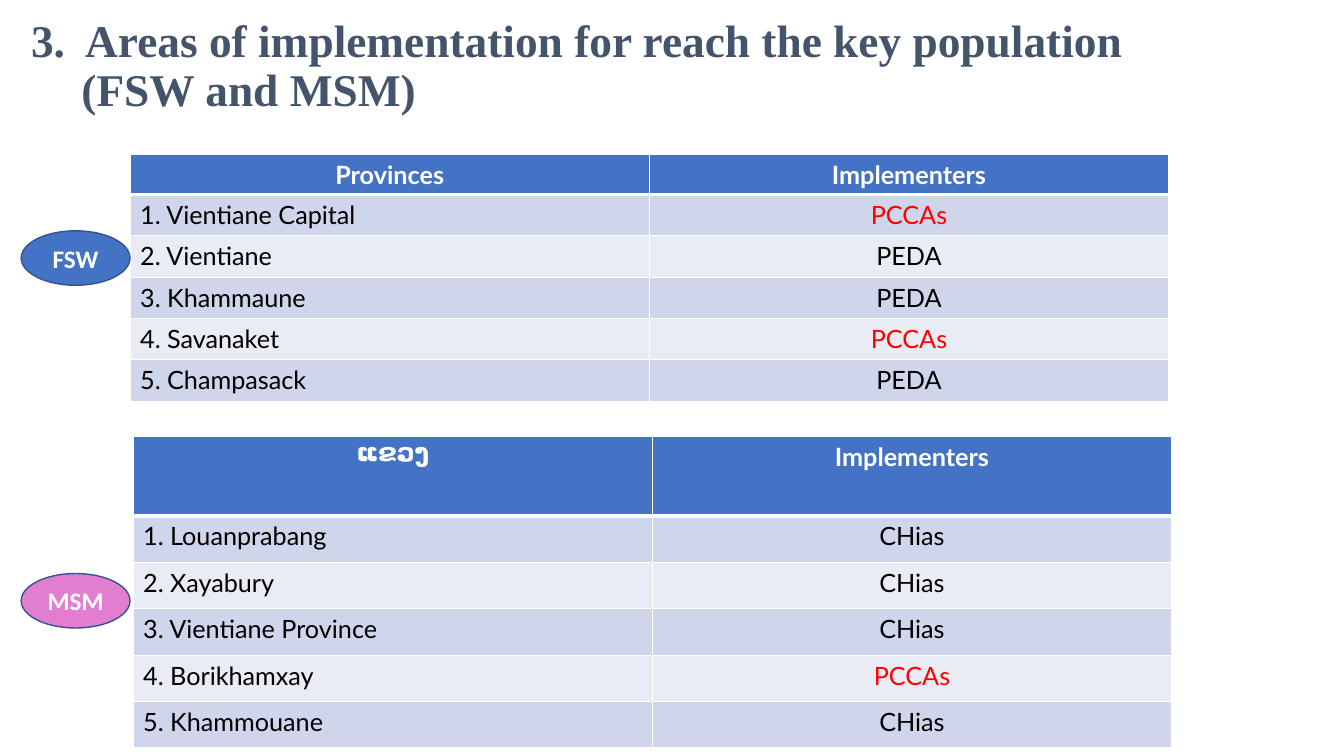
from lxml import etree
from pptx import Presentation
from pptx.dml.color import RGBColor
from pptx.enum import shapes, text
from pptx.oxml.ns import qn
from pptx.util import Inches, Pt

TITLE = "3.  Areas of implementation for reach the key population\v\t(FSW and MSM)"
BLUE, WHITE, BLACK, RED = "4472C4", "FFFFFF", "000000", "FF0000"
BANDS = ("CFD5EA", "E9EBF5")
HIGHLIGHTED = "PCCAs"
COLUMN_WIDTH = 5.15

# group, badge colour, badge top, table left and top, header and row heights, rows
GROUPS = [
    ("FSW", BLUE, 2.29, (1.29, 1.53), (0.38, 0.41), [
        ("Provinces", "Implementers"),
        ("1. Vientiane Capital", "PCCAs"),
        ("2. Vientiane", "PEDA"),
        ("3. Khammaune", "PEDA"),
        ("4. Savanaket", "PCCAs"),
        ("5. Champasack", "PEDA"),
    ]),
    ("MSM", "E27ECF", 5.69, (1.32, 4.33), (0.79, 0.46), [
        ("ແຂວງ", "Implementers"),
        ("1. Louanprabang", "CHias"),
        ("2. Xayabury", "CHias"),
        ("3. Vientiane Province", "CHias"),
        ("4. Borikhamxay", "PCCAs"),
        ("5. Khammouane", "CHias"),
    ]),
]


def rgb(color):
    return RGBColor.from_string(color)


def style(p, font, size, color, bold, align=text.PP_ALIGN.LEFT):
    p.alignment = align
    p.font.name, p.font.size, p.font.bold = font, Pt(size), bold
    p.font.color.rgb = rgb(color)


def set_borders(cell, widths):
    """Draw white left, right, top and bottom borders of the given point widths."""
    tc_pr = cell._tc.get_or_add_tcPr()
    for i, (side, width) in enumerate(zip("LRTB", widths)):
        line = etree.Element(qn(f"a:ln{side}"), w=str(Pt(width)))
        fill = etree.SubElement(line, qn("a:solidFill"))
        etree.SubElement(fill, qn("a:srgbClr"), val=WHITE)
        tc_pr.insert(i, line)


def add_title(slide):
    tf = slide.shapes.add_textbox(Inches(0.21), Inches(0.17), Inches(12.96), Inches(1)).text_frame
    tf.word_wrap = True
    tf.vertical_anchor = text.MSO_ANCHOR.MIDDLE
    p = tf.paragraphs[0]
    p.text = TITLE
    p.line_spacing = 0.9
    style(p, "Times New Roman", 32.4, "44546A", True)


def add_badge(slide, label, color, top):
    s = slide.shapes.add_shape(shapes.MSO_SHAPE.OVAL, Inches(0.21), Inches(top),
                               Inches(1.08), Inches(0.54))
    s.shadow.inherit = False
    s.fill.solid()
    s.fill.fore_color.rgb = rgb(color)
    s.line.color.rgb = rgb("325491")
    s.line.width = Pt(1)
    tf = s.text_frame
    tf.word_wrap = False
    tf.vertical_anchor = text.MSO_ANCHOR.MIDDLE
    p = tf.paragraphs[0]
    p.text = label
    style(p, "Calibri", 18, WHITE, True, text.PP_ALIGN.CENTER)


def add_area_table(slide, position, heights, rows):
    header_height, row_height = heights
    total = header_height + row_height * (len(rows) - 1)
    table = slide.shapes.add_table(len(rows), 2, *map(Inches, position),
                                   Inches(2 * COLUMN_WIDTH), Inches(total)).table
    for column in table.columns:
        column.width = Inches(COLUMN_WIDTH)
    for r, row in enumerate(rows):
        header = r == 0
        table.rows[r].height = Inches(header_height if header else row_height)
        for c, value in enumerate(row):
            cell = table.cell(r, c)
            cell.fill.solid()
            cell.fill.fore_color.rgb = rgb(BLUE if header else BANDS[(r - 1) % 2])
            set_borders(cell, (1, 1, 3 if r == 1 else 1, 3 if header else 1))
            p = cell.text_frame.paragraphs[0]
            p.text = value
            color = WHITE if header else RED if value == HIGHLIGHTED else BLACK
            centred = header or c == 1
            style(p, "Lato", 18, color, header,
                  text.PP_ALIGN.CENTER if centred else text.PP_ALIGN.LEFT)


def main():
    prs = Presentation()
    prs.slide_width, prs.slide_height = Inches(13.33), Inches(7.5)
    slide = prs.slides.add_slide(prs.slide_layouts[6])
    add_title(slide)
    for label, color, badge_top, position, heights, rows in GROUPS:
        add_area_table(slide, position, heights, rows)
        add_badge(slide, label, color, badge_top)
    prs.save("out.pptx")


if __name__ == "__main__":
    main()
